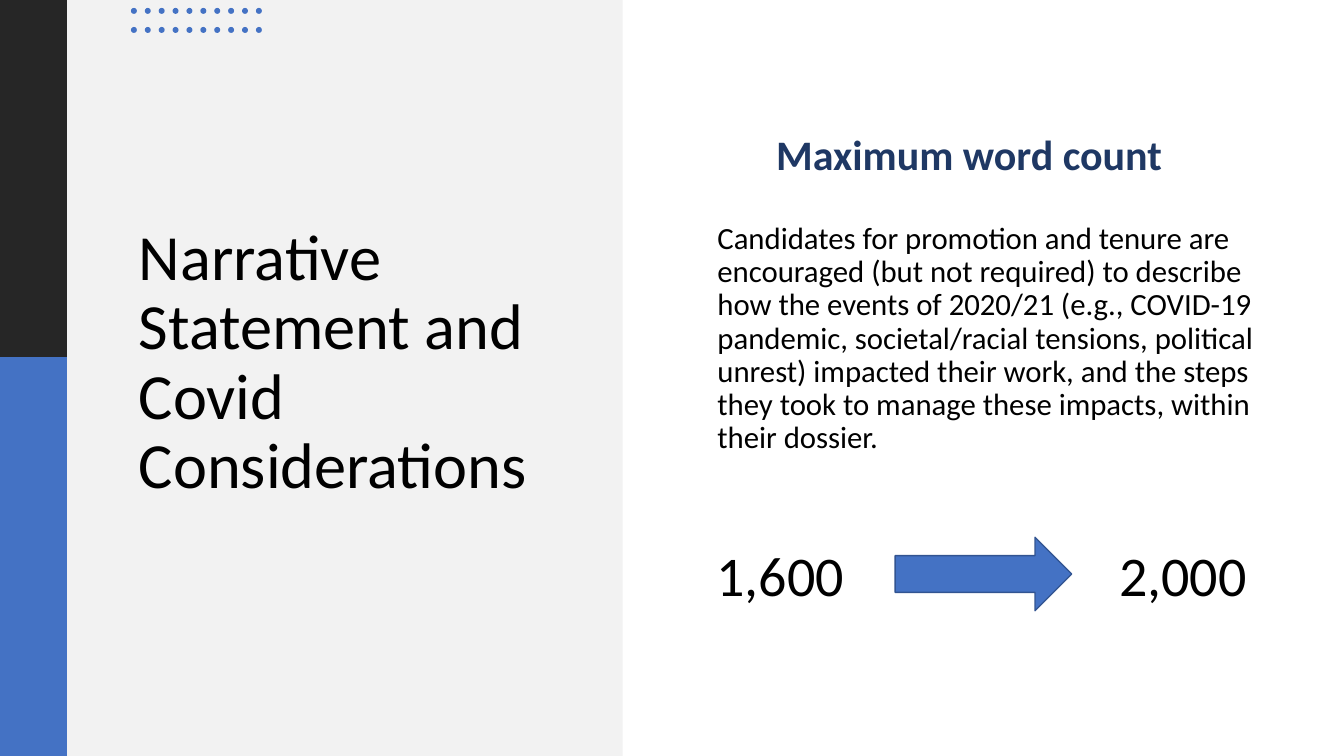
from lxml.etree import SubElement
from pptx import Presentation
from pptx.dml.color import RGBColor
from pptx.enum.shapes import MSO_SHAPE
from pptx.enum.text import MSO_ANCHOR, PP_ALIGN
from pptx.oxml.ns import qn
from pptx.util import Cm, Pt

COLORS = {
    "black": "000000",
    "charcoal": "262626",
    "blue": "4472C4",
    "outline": "325491",
    "navy": "1F3864",
    "panel": "F2F2F2",
}


class SlideBuilder:
    font_name = "Calibri"

    def __init__(self, slide):
        self.slide = slide

    def color(self, name):
        return RGBColor.from_string(COLORS[name])

    def shape(self, kind, left, top, width, height, fill, line=None, parent=None):
        shapes = (parent or self.slide).shapes
        shape = shapes.add_shape(kind, Cm(left), Cm(top), Cm(width), Cm(height))
        shape.shadow.inherit = False
        shape.fill.solid()
        shape.fill.fore_color.rgb = self.color(fill)
        if line:
            shape.line.color.rgb = self.color(line)
            shape.line.width = Pt(1)
        else:
            shape.line.fill.background()
        return shape

    def text(self, text, left, top, width, height, size, color="black", bold=False,
             align=PP_ALIGN.LEFT, anchor=MSO_ANCHOR.TOP, spacing=None, tab=None):
        box = self.slide.shapes.add_textbox(Cm(left), Cm(top), Cm(width), Cm(height))
        text_frame = box.text_frame
        text_frame.word_wrap = True
        text_frame.vertical_anchor = anchor
        text_frame.text = text
        paragraph = text_frame.paragraphs[0]
        paragraph.alignment = align
        if spacing:
            paragraph.line_spacing = spacing
        if tab:
            properties = paragraph._p.get_or_add_pPr()
            tab_list = SubElement(properties, qn("a:tabLst"))
            SubElement(tab_list, qn("a:tab"), pos=str(Cm(tab)), algn="l")
        for run in paragraph.runs:
            run.font.name = self.font_name
            run.font.size = Pt(size)
            run.font.bold = bold
            run.font.color.rgb = self.color(color)
        return text_frame

    def dot_grid(self, left, top, columns, rows, column_step, row_step, diameter):
        group = self.slide.shapes.add_group_shape()
        for row in range(rows):
            for column in range(columns):
                self.shape(MSO_SHAPE.OVAL, left + column * column_step,
                           top + row * row_step, diameter, diameter, "blue", parent=group)


def main():
    presentation = Presentation()
    presentation.slide_width = Cm(33.87)
    presentation.slide_height = Cm(19.05)
    builder = SlideBuilder(presentation.slides.add_slide(presentation.slide_layouts[6]))

    builder.shape(MSO_SHAPE.RECTANGLE, 0, 0, 1.69, 9, "charcoal")
    builder.shape(MSO_SHAPE.RECTANGLE, 0, 9, 1.69, 10.05, "blue")
    builder.shape(MSO_SHAPE.RECTANGLE, 1.69, 0, 14, 19.05, "panel")
    builder.text("Narrative Statement and \vCovid Considerations", 3.25, 3.71, 10.9, 10.9,
                 46, anchor=MSO_ANCHOR.MIDDLE, spacing=0.9)
    builder.dot_grid(3.3, 0.2, 10, 2, 0.35, 0.48, 0.15)

    body = builder.text(
        "Candidates for promotion and tenure are encouraged (but not required) to describe "
        "how the events of 2020/21 (e.g., COVID-19 pandemic, societal/racial tensions, "
        "political unrest) impacted their work, and the steps they took to manage these "
        "impacts, within their dossier.",
        17.83, 1.4, 14.17, 15.49, 22, anchor=MSO_ANCHOR.MIDDLE, spacing=0.9)
    body.margin_bottom = Cm(1.32)

    word_counts = builder.text("1,600\t2,000", 17.6, 13.49, 14.35, 1.96, 40, tab=10.15)
    word_counts.margin_left = Cm(0.46)
    builder.shape(MSO_SHAPE.RIGHT_ARROW, 22.56, 13.54, 4.45, 1.85, "blue", "outline")
    builder.text("Maximum word count", 17.4, 3.12, 14.05, 2.31, 30, "navy", True,
                 PP_ALIGN.CENTER)

    presentation.save("out.pptx")


if __name__ == "__main__":
    main()
